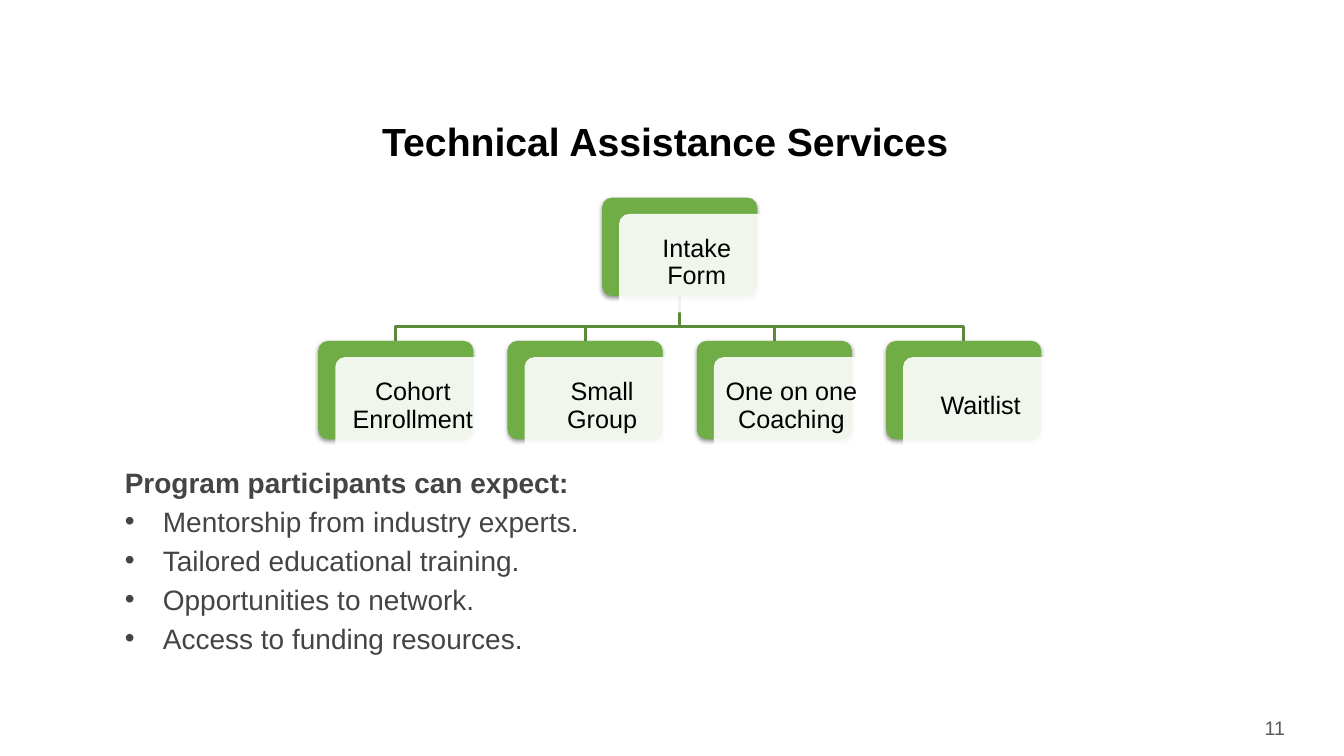
from dataclasses import dataclass

import pptx
import pptx.dml.color
import pptx.enum.shapes
import pptx.enum.text
import pptx.oxml
import pptx.oxml.ns
import pptx.util
from pptx.util import Cm, Pt

FONT = "Arial"
GREEN, LINE_GREEN = "70AD47", "5A8B39"
BLACK, WHITE, DARK_GREY, GREY = "000000", "FFFFFF", "444444", "595959"
CARD_WIDTH, CARD_HEIGHT = 3.91, 2.48
PANEL_SHIFT_X, PANEL_SHIFT_Y = 0.43, 0.41
FIRST_LEFT, CARD_STEP = 8.02, 4.77
ROOT_TOP, BRANCH_TOP, BUS_Y = 4.98, 8.59, 8.22
BULLET_INDENT = 0.96
ALIGN = pptx.enum.text.PP_ALIGN
ANCHOR = pptx.enum.text.MSO_ANCHOR
NAMESPACE = pptx.oxml.ns.nsdecls("a")


@dataclass
class Card:
    label: str
    left: float
    top: float

    @property
    def middle(self) -> float:
        return self.left + CARD_WIDTH / 2


BRANCH_LABELS = ["Cohort Enrollment", "Small Group", "One on one Coaching", "Waitlist"]
BRANCHES = [Card(label, FIRST_LEFT + i * CARD_STEP, BRANCH_TOP)
            for i, label in enumerate(BRANCH_LABELS)]
ROOT = Card("Intake Form", (BRANCHES[0].left + BRANCHES[-1].left) / 2, ROOT_TOP)
EXPECTATIONS = [
    "Mentorship from industry experts.",
    "Tailored educational training.",
    "Opportunities to network.",
    "Access to funding resources.",
]


def set_color(color_format, hex_color: str) -> None:
    color_format.rgb = pptx.dml.color.RGBColor.from_string(hex_color)


def style(paragraph, size: float, color: str, bold: bool = False) -> None:
    paragraph.font.name = FONT
    paragraph.font.size = Pt(size)
    paragraph.font.bold = bold
    set_color(paragraph.font.color, color)


def place(shape, left: float, top: float, width: float, height: float) -> None:
    shape.left, shape.top = Cm(left), Cm(top)
    shape.width, shape.height = Cm(width), Cm(height)


def set_bullet(paragraph, bulleted: bool) -> None:
    properties = paragraph._p.get_or_add_pPr()
    indent = Cm(BULLET_INDENT) if bulleted else 0
    properties.set("marL", str(indent))
    properties.set("indent", str(-indent))
    bullet = '<a:buChar {} char="•"/>' if bulleted else "<a:buNone {}/>"
    properties.append(pptx.oxml.parse_xml(bullet.format(NAMESPACE)))


def add_rounded(slide, left: float, top: float, color: str):
    shape = slide.shapes.add_shape(
        pptx.enum.shapes.MSO_SHAPE.ROUNDED_RECTANGLE,
        Cm(left), Cm(top), Cm(CARD_WIDTH), Cm(CARD_HEIGHT))
    shape.adjustments[0] = 0.1
    shape.shadow.inherit = False
    shape.fill.solid()
    set_color(shape.fill.fore_color, color)
    shape.line.fill.background()
    return shape


def add_card_back(slide, card: Card) -> None:
    """Add the green rectangle with its soft shadow below."""
    back = add_rounded(slide, card.left, card.top, GREEN)
    effects = back._element.spPr.find(pptx.oxml.ns.qn("a:effectLst"))
    effects.append(pptx.oxml.parse_xml(
        f'<a:outerShdw {NAMESPACE} blurRad="{Pt(3.1)}" dist="{Pt(1.6)}" dir="5400000" '
        f'algn="t" rotWithShape="0"><a:srgbClr val="{BLACK}"><a:alpha val="38000"/>'
        '</a:srgbClr></a:outerShdw>'))


def add_card_panel(slide, card: Card) -> None:
    """Add the translucent white rectangle that carries the label."""
    panel = add_rounded(slide, card.left + PANEL_SHIFT_X, card.top + PANEL_SHIFT_Y, WHITE)
    fill_color = panel._element.spPr.find(
        f'{pptx.oxml.ns.qn("a:solidFill")}/{pptx.oxml.ns.qn("a:srgbClr")}')
    fill_color.append(pptx.oxml.parse_xml(f'<a:alpha {NAMESPACE} val="90000"/>'))
    frame = panel.text_frame
    frame.word_wrap = True
    frame.vertical_anchor = ANCHOR.MIDDLE
    frame.margin_left = frame.margin_right = Cm(0.2)
    frame.margin_top = frame.margin_bottom = Cm(0.17)
    label = frame.paragraphs[0]
    label.text = card.label
    label.alignment = ALIGN.CENTER
    label.line_spacing = 0.9
    style(label, 18, BLACK)


def add_branch_line(slide, card: Card) -> None:
    """Draw the bent line from the root card down to one branch card."""
    builder = slide.shapes.build_freeform(Cm(ROOT.middle), Cm(ROOT_TOP + CARD_HEIGHT))
    builder.add_line_segments(
        [(Cm(ROOT.middle), Cm(BUS_Y)), (Cm(card.middle), Cm(BUS_Y)),
         (Cm(card.middle), Cm(BRANCH_TOP))], close=False)
    line = builder.convert_to_shape()
    line.shadow.inherit = False
    line.fill.background()
    set_color(line.line.color, LINE_GREEN)
    line.line.width = Pt(2)


def add_tree(slide) -> None:
    for card in reversed(BRANCHES):
        add_branch_line(slide, card)
    for card in [ROOT, *BRANCHES]:
        add_card_back(slide, card)
        add_card_panel(slide, card)


def fill_title(title) -> None:
    place(title, 2.88, 2.74, 27.76, 1.6)
    title.text_frame.text = "Technical Assistance Services"
    title.text_frame.vertical_anchor = ANCHOR.MIDDLE
    heading = title.text_frame.paragraphs[0]
    heading.alignment = ALIGN.CENTER
    style(heading, 28, BLACK, bold=True)


def fill_expectations(body) -> None:
    place(body, 2.89, 11.6, 27.76, 5.52)
    frame = body.text_frame
    frame.vertical_anchor = ANCHOR.TOP
    frame.text = "\n".join(["Program participants can expect:", *EXPECTATIONS])
    for i, paragraph in enumerate(frame.paragraphs):
        paragraph.space_before = Pt(3.8 if i else 0)
        set_bullet(paragraph, bulleted=i > 0)
        style(paragraph, 20, DARK_GREY, bold=i == 0)


def add_page_number(slide) -> None:
    box = slide.shapes.add_textbox(Cm(31.62), Cm(17.91), Cm(2.21), Cm(1.02))
    box.text_frame.word_wrap = True
    number = box.text_frame.paragraphs[0]
    number.text = "11"
    style(number, 14, GREY)


def main() -> None:
    presentation = pptx.Presentation()
    presentation.slide_width, presentation.slide_height = Cm(33.87), Cm(19.05)
    slide = presentation.slides.add_slide(presentation.slide_layouts[1])
    fill_title(slide.shapes.title)
    fill_expectations(slide.placeholders[1])
    add_tree(slide)
    add_page_number(slide)
    presentation.save("out.pptx")


if __name__ == "__main__":
    main()
